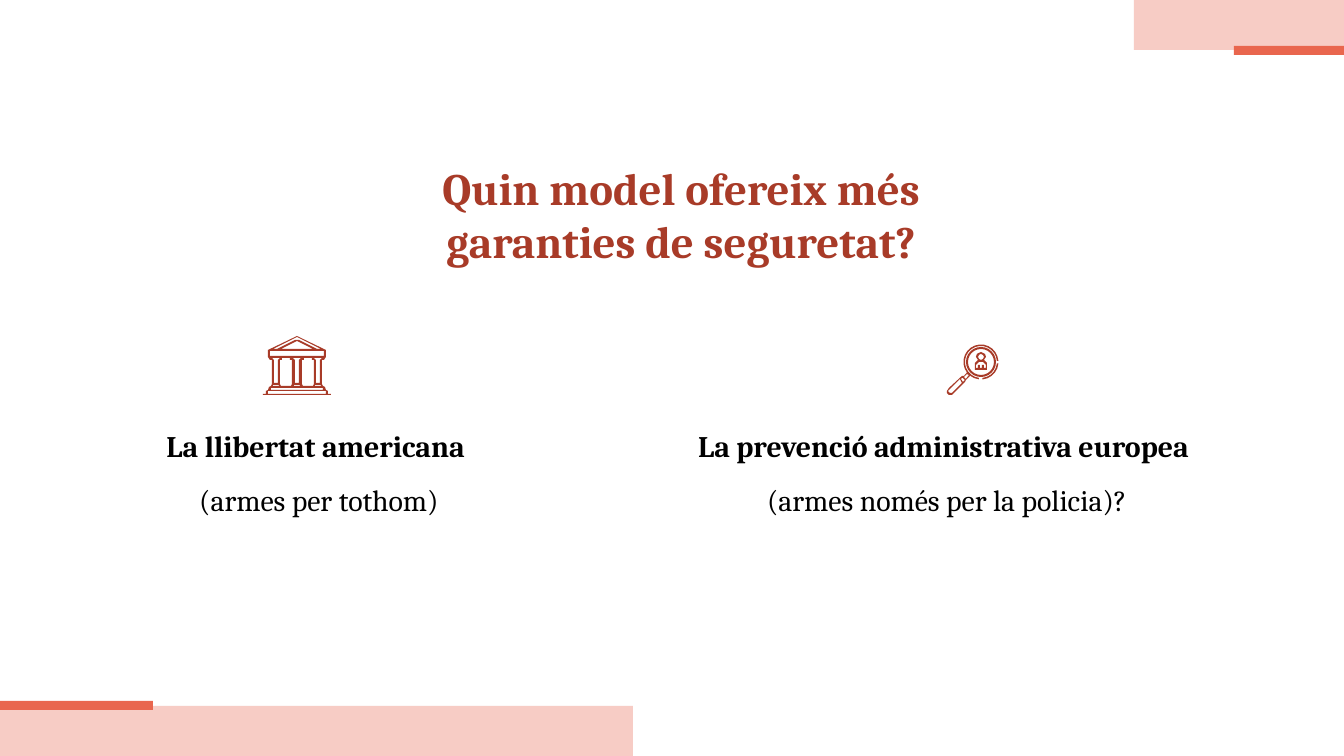
"""Builds a slide that asks which of two weapons models offers more safety."""
import math
import pptx
import pptx.dml.color
import pptx.enum.shapes
import pptx.enum.text
import pptx.util

SCALE = 9144000 / 1344
PINK = pptx.dml.color.RGBColor(0xF7, 0xCC, 0xC5)
CORAL = pptx.dml.color.RGBColor(0xE9, 0x66, 0x4E)
BRICK = pptx.dml.color.RGBColor(0xA8, 0x3B, 0x28)
BLACK = pptx.dml.color.RGBColor(0, 0, 0)
LENS_X, LENS_Y = 981, 362

deck = pptx.Presentation()
deck.slide_width, deck.slide_height = round(1344 * SCALE), round(756 * SCALE)
page = deck.slides.add_slide(deck.slide_layouts[6])


def mirror(axis, half):
    return half + [(2 * axis - x, y) for x, y in reversed(half)]


def lens_arc(radius, start, end):
    steps = max(2, round(abs(end - start) / 15))
    angles = [math.radians(start + (end - start) * step / steps) for step in range(steps + 1)]
    return [(LENS_X + radius * math.cos(a), LENS_Y + radius * math.sin(a)) for a in angles]


for bounds, fill in (
    ((0, 706, 633, 50), PINK),
    ((1134, 0, 210, 50), PINK),
    ((0, 701, 153, 9), CORAL),
    ((1234, 46, 110, 9), CORAL),
):
    band = page.shapes.add_shape(
        pptx.enum.shapes.MSO_SHAPE.RECTANGLE, *[round(value * SCALE) for value in bounds]
    )
    band.shadow.inherit = False
    band.fill.solid()
    band.fill.fore_color.rgb = fill
    band.line.fill.background()

title = [("Quin model ofereix més \vgaranties de seguretat? ", True)]
freedom = [("La llibertat americana ", True), ("(armes per tothom)", False)]
prevention = [
    ("La prevenció administrativa europea ", True),
    ("(armes només per la policia)?", False),
]
for bounds, lines, size, color, spacing, bottom in (
    ((119, 199, 1134, 85), title, 24, BRICK, 1.0, 68),
    ((59, 401, 520, 125), freedom, 16, BLACK, 1.5, 13),
    ((658, 401, 578, 125), prevention, 16, BLACK, 1.5, 13),
):
    box = page.shapes.add_textbox(*[round(value * SCALE) for value in bounds])
    frame_format = {
        "word_wrap": True,
        "vertical_anchor": pptx.enum.text.MSO_ANCHOR.MIDDLE,
        "margin_left": round(13 * SCALE),
        "margin_right": round(13 * SCALE),
        "margin_top": round(13 * SCALE),
        "margin_bottom": round(bottom * SCALE),
    }
    for name, value in frame_format.items():
        setattr(box.text_frame, name, value)
    for index, (text, bold) in enumerate(lines):
        para = box.text_frame.add_paragraph() if index else box.text_frame.paragraphs[0]
        para.alignment = pptx.enum.text.PP_ALIGN.CENTER
        para.line_spacing = spacing
        para.text = text
        for span in para.runs:
            span.font.color.rgb = color
            span_format = {"name": "Cambria", "size": pptx.util.Pt(size), "bold": bold}
            for name, value in span_format.items():
                setattr(span.font, name, value)

handle_edge = [
    (964, 376), (962, 376), (949, 388), (947, 391), (947, 393), (949, 395),
    (952, 395), (965, 382), (966, 380), (970, 376),
]
magnifier = [
    lens_arc(17.5, -4, -217) + handle_edge + lens_arc(17.5, 130, 97) + lens_arc(16, 97, 356),
    [(967, 374), (969, 375), (966, 379), (964, 377)],
    [(962, 378), (963, 378), (965, 380), (963, 382), (961, 379)],
    [(960, 379), (962, 383), (952, 393), (950, 393), (948, 391), (949, 390)],
]
lens = [lens_arc(15, 0, 360), lens_arc(13, 0, 360)]
person = [
    mirror(981, [(981, 352), (985, 354), (986, 357), (984, 360), (987, 363), (987, 370)]),
    mirror(981, [(981, 354), (983, 355), (984, 357), (983, 359), (981, 360)]),
    mirror(981, [
        (983, 362), (986, 365), (986, 368), (984, 368), (984, 365), (982, 365), (982, 368),
    ]),
]
rim = [lens_arc(17.5, 5, 85) + lens_arc(16, 85, 5)]
temple = [
    mirror(297, [
        (297, 336), (326, 350), (326, 357), (324, 360), (322, 360), (322, 384), (323, 386),
        (325, 387), (326, 390), (328, 391), (328, 394), (331, 394), (331, 395),
    ]),
    mirror(297, [(297, 337), (321, 349), (317, 349), (299, 340)]),
    mirror(297, [(297, 341), (313, 349)]),
    mirror(297, [(324, 351), (324, 356)]),
    mirror(297, [(323, 388), (323, 390)]),
    mirror(297, [(326, 391), (326, 394)]),
]
for center in (276, 297, 318):
    temple.append(mirror(center, [(center + 4, 358), (center + 2, 360), (center + 2, 383)]))
    temple.append(mirror(center, [(center + 3, 385), (center + 3, 386)]))
for center in (286, 308):
    temple.append(mirror(center, [
        (center + 4, 358), (center + 4, 360), (center + 6, 360), (center + 6, 384),
        (center + 5, 386),
    ]))

for contours in (magnifier, lens, person, rim, temple):
    outlines = [[(x * SCALE, y * SCALE) for x, y in contour] for contour in contours]
    builder = page.shapes.build_freeform(*outlines[0][0], scale=1.0)
    builder.add_line_segments(outlines[0][1:], close=True)
    for outline in outlines[1:]:
        builder.move_to(*outline[0])
        builder.add_line_segments(outline[1:], close=True)
    icon = builder.convert_to_shape()
    icon.shadow.inherit = False
    icon.fill.solid()
    icon.fill.fore_color.rgb = BRICK
    icon.line.fill.background()

deck.save("out.pptx")
